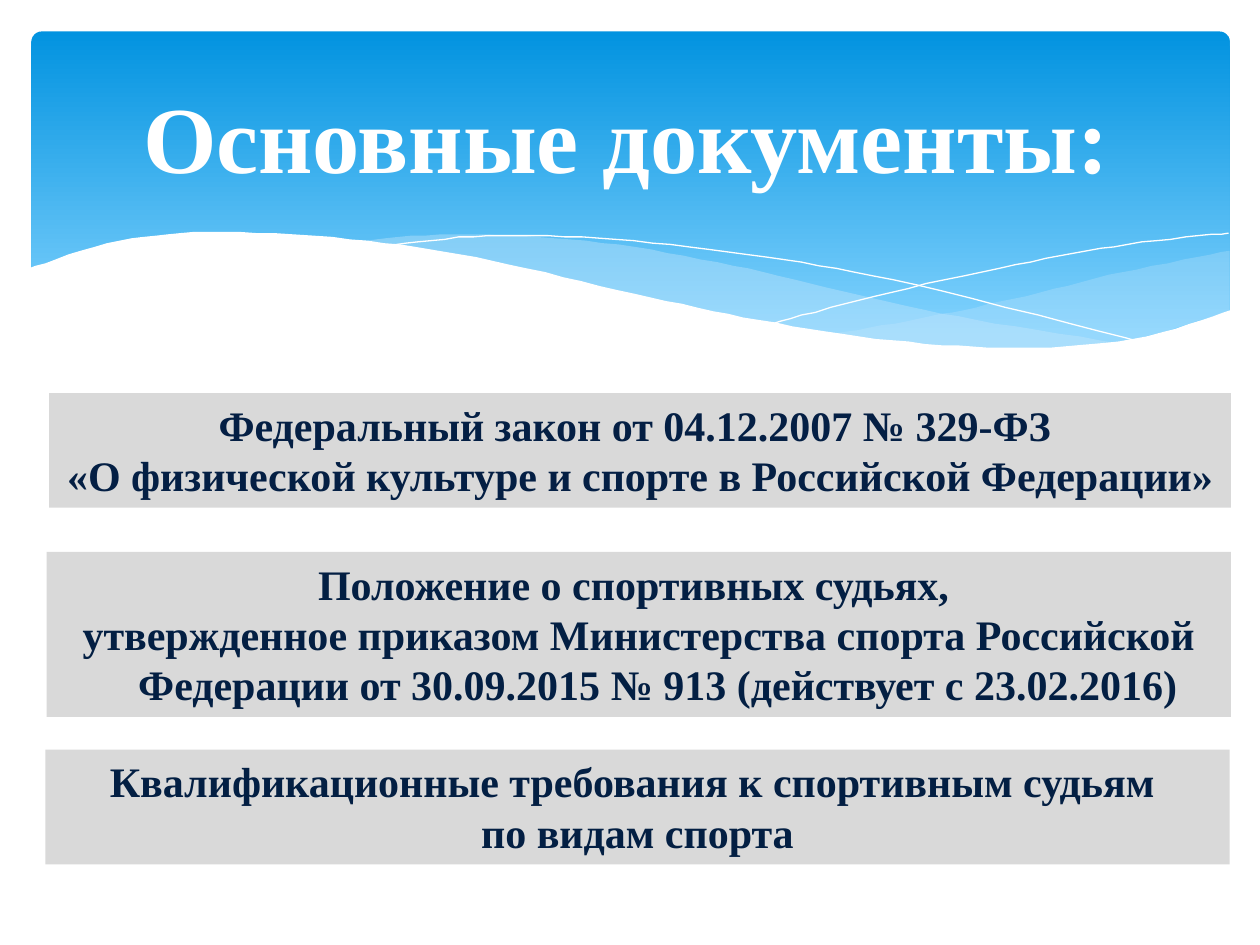
from dataclasses import dataclass
from typing import Optional

from lxml.etree import SubElement
from pptx import Presentation
from pptx.dml.color import RGBColor
from pptx.enum.shapes import MSO_SHAPE
from pptx.enum.text import MSO_ANCHOR, MSO_AUTO_SIZE, PP_ALIGN
from pptx.oxml.ns import qn
from pptx.util import Pt

PX = 9144  # EMU per px, 100 px to the inch
FONT = "Times New Roman"
WHITE, MIST, GREY = "FFFFFF", "C6E7FC", "D9D9D9"
INDENT = 30
STEPS = 8  # line segments between two knots of a curve

Point = tuple[float, float]


@dataclass
class Wave:
    edges: list[list[Point]]  # each edge is a smooth curve through its knots
    fill: Optional[str] = None  # no fill means an open white hairline
    alpha: int = 100


@dataclass
class Card:
    box: tuple[int, int, int, int]
    lines: list[str]
    color: str = "031F43"


WAVES = [
    # Right swell
    Wave([[(976, 199), (891, 216), (805, 237), (729, 253), (661, 265)],
          [(661, 265), (745, 275), (814, 278), (889, 272), (976, 247)]], MIST, 29),
    # Middle swell
    Wave([[(893, 273), (775, 254), (668, 231), (569, 208), (465, 191), (361, 186),
           (286, 191)],
          [(286, 191), (404, 211), (530, 240), (650, 264), (773, 277), (893, 273)]],
         MIST, 40),
    # Crossing hairlines
    Wave([[(309, 195), (387, 187), (489, 190), (608, 204), (727, 226), (907, 272)]]),
    Wave([[(613, 257), (695, 235), (806, 210), (895, 194), (975, 185)]]),
    # White foreground
    Wave([[(977, 246), (899, 269), (809, 276), (708, 270), (603, 254), (503, 233),
           (391, 207), (292, 191), (177, 184), (95, 191), (23, 213)],
          [(23, 329), (977, 329)]], WHITE),
]

CARDS = [
    Card((39, 312, 938, 91),
         ["Федеральный закон от 04.12.2007 № 329-ФЗ ",
          "«О физической культуре и спорте в Российской Федерации»"], "041F44"),
    Card((37, 438, 940, 131),
         ["Положение о спортивных судьях, ",
          "утвержденное приказом Министерства спорта Российской Федерации "
          "от 30.09.2015 № 913 (действует с 23.02.2016)"]),
    Card((36, 595, 940, 91),
         ["Квалификационные требования к спортивным судьям ", "по видам спорта"]),
]


def rgb(color: str) -> RGBColor:
    return RGBColor.from_string(color)


def emu(box: tuple[int, ...]) -> list[int]:
    return [v * PX for v in box]


def smooth(knots: list[Point]) -> list[Point]:
    """Sample a Catmull-Rom spline through the knots."""
    padded = [knots[0], *knots, knots[-1]]
    points = [knots[0]]
    for quad in zip(padded, padded[1:], padded[2:], padded[3:]):
        for i in range(1, STEPS + 1):
            t = i / STEPS
            x, y = (b + t / 2 * (c - a + t * (2 * a - 5 * b + 4 * c - d
                                              + t * (3 * (b - c) + d - a)))
                    for a, b, c, d in zip(*quad))
            points.append((x, y))
    return points


def set_fill(sp, color: str, alpha: int = 100) -> None:
    sp.fill.solid()
    sp.fill.fore_color.rgb = rgb(color)
    if alpha < 100:
        clr = sp.fill._xPr.find(qn("a:solidFill"))[0]
        SubElement(clr, qn("a:alpha")).set("val", str(alpha * 1000))


def add_box(s, kind, box: tuple[int, int, int, int]):
    sp = s.shapes.add_shape(kind, *emu(box))
    sp.shadow.inherit = False
    sp.line.fill.background()
    return sp


def add_wave(s, wave: Wave) -> None:
    points = [point for edge in wave.edges for point in smooth(edge)]
    fb = s.shapes.build_freeform(*points[0], scale=PX)
    fb.add_line_segments(points[1:], close=wave.fill is not None)
    sp = fb.convert_to_shape()
    sp.shadow.inherit = False
    if wave.fill:
        set_fill(sp, wave.fill, wave.alpha)
        sp.line.fill.background()
    else:
        sp.fill.background()
        sp.line.color.rgb = rgb(WHITE)
        sp.line.width = Pt(0)


def write(tf, lines: list[str], size: int, color: str, indent: int = 0) -> None:
    tf.word_wrap = True
    for i, line in enumerate(lines):
        p = tf.paragraphs[0] if i == 0 else tf.add_paragraph()
        p.alignment = PP_ALIGN.CENTER
        if indent:
            pPr = p._p.get_or_add_pPr()
            pPr.set("marL", str(indent * PX))
            pPr.set("indent", str(-indent * PX))
        r = p.add_run()
        r.text = line
        for name, value in {"name": FONT, "size": Pt(size), "bold": True}.items():
            setattr(r.font, name, value)
        r.font.color.rgb = rgb(color)


def add_banner(s) -> None:
    sp = add_box(s, MSO_SHAPE.ROUNDED_RECTANGLE, (25, 25, 951, 270))
    sp.adjustments[0] = 0.03
    sp.fill.gradient()
    sp.fill.gradient_angle = 270
    for stop, (pos, color) in zip(sp.fill.gradient_stops,
                                  [(0, "0293E0"), (0.9, "83D3FE")]):
        stop.position = pos
        stop.color.rgb = rgb(color)


def add_title(s, text: str) -> None:
    tf = s.shapes.add_textbox(*emu((47, 39, 900, 137))).text_frame
    tf.vertical_anchor = MSO_ANCHOR.MIDDLE
    write(tf, [text], 54, WHITE)


def add_card(s, card: Card) -> None:
    sp = add_box(s, MSO_SHAPE.RECTANGLE, card.box)
    set_fill(sp, GREY)
    tf = sp.text_frame
    tf.vertical_anchor = MSO_ANCHOR.TOP
    tf.auto_size = MSO_AUTO_SIZE.SHAPE_TO_FIT_TEXT
    write(tf, card.lines, 24, card.color, INDENT)


def main() -> None:
    prs = Presentation()
    prs.slide_width, prs.slide_height = emu((1000, 750))
    s = prs.slides.add_slide(prs.slide_layouts[6])
    # Header
    add_banner(s)
    for wave in WAVES:
        add_wave(s, wave)
    add_title(s, "Основные документы:")
    # Documents
    for card in CARDS:
        add_card(s, card)
    prs.save("out.pptx")


if __name__ == "__main__":
    main()
